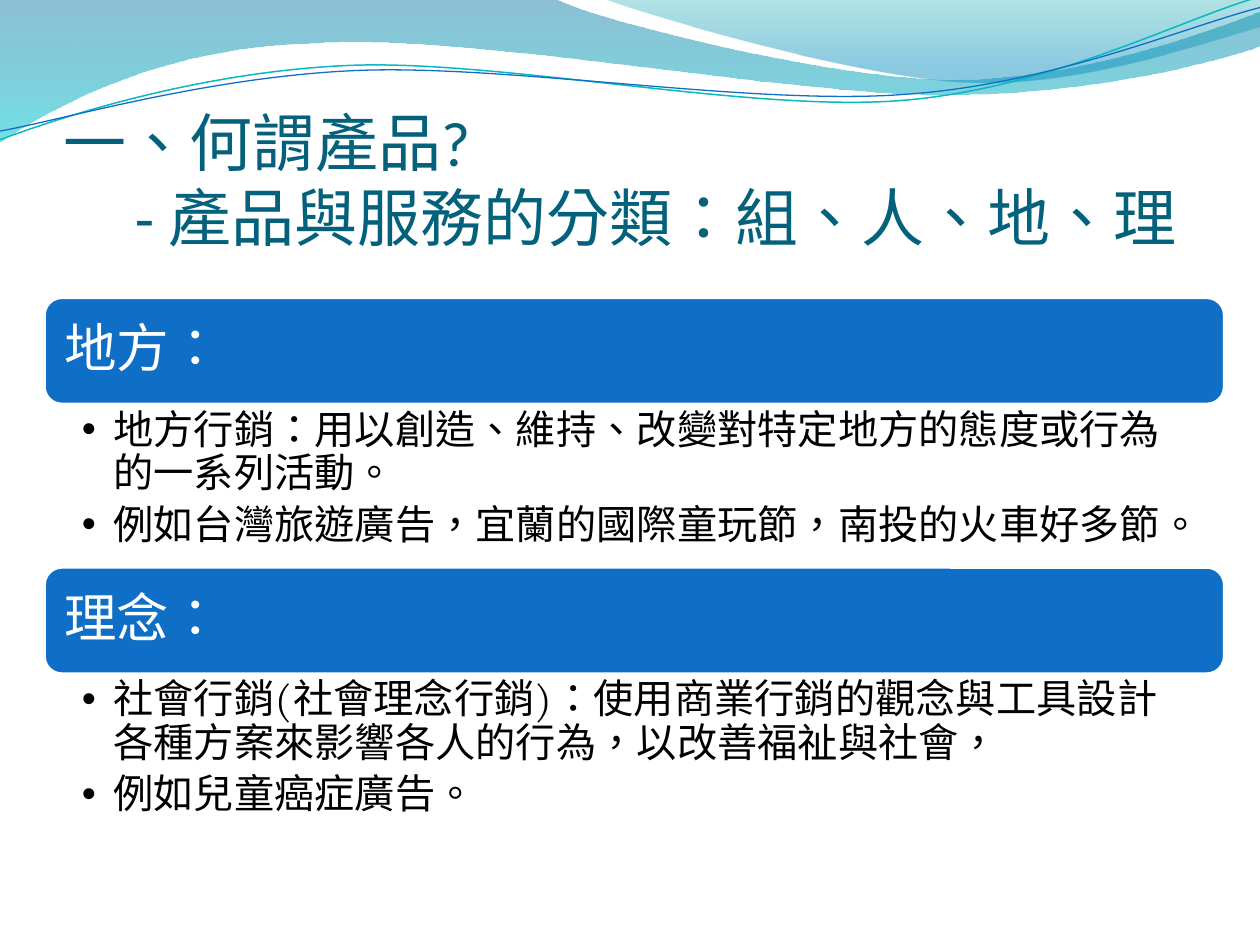
from lxml import etree
from pptx import Presentation
from pptx import util as u
from pptx.dml.color import RGBColor
from pptx.enum import lang, shapes, text
from pptx.oxml import ns

C = {"blue": "0F6FC6", "teal": "0AB8BF", "title": "04617B", "white": "FFFFFF", "black": "000000",
     "deep": "0074A1", "aqua": "00C6CF", "sea": "00A1A9", "sky": "008BBF"}
BODY_FONT = "TeX Gyre Pagella"


def draw_path(s, start, segments, close):
    ends = [(u.Inches(seg[-2]), u.Inches(seg[-1])) for seg in segments]
    fb = s.shapes.build_freeform(u.Inches(start[0]), u.Inches(start[1]))
    fb.add_line_segments(ends, close=close)
    sp = fb.convert_to_shape()
    sp.shadow.inherit = False
    for line, seg in zip(list(sp.element.spPr.iter(ns.qn("a:lnTo"))), segments):
        if len(seg) == 6:
            curve = etree.Element(ns.qn("a:cubicBezTo"))
            for x, y in zip(seg[::2], seg[1::2]):
                etree.SubElement(curve, ns.qn("a:pt"), x=str(u.Inches(x) - sp.left), y=str(u.Inches(y) - sp.top))
            line.getparent().replace(line, curve)
    return sp


def style(p, font, size, color):
    p.alignment = text.PP_ALIGN.LEFT
    for r in p.runs:
        r.font.name = font
        r.font.size = u.Pt(size)
        r.font.color.rgb = RGBColor.from_string(C[color])
        r.font.language_id = lang.MSO_LANGUAGE_ID.TRADITIONAL_CHINESE


prs = Presentation()
prs.slide_width, prs.slide_height = u.Inches(10), u.Inches(7.5)
s = prs.slides.add_slide(prs.slide_layouts[5])

waves = [
    ((0, 0), [(4.4, -0.01), (4.76, 0.17, 6.64, 0.63, 7.58, 0.63), (8.53, 0.63, 9.58, 0.26, 10, 0.09),
              (10.01, 0.36), (9.83, 0.44, 8.7, 0.76, 7.46, 0.75), (6.22, 0.75, 3.82, 0.28, 2.57, 0.34),
              (1.29, 0.36, 0.46, 0.83, -0.01, 1.13), (0, 0)],
     [(0, "deep", 45), (1, "aqua", 55)]),
    ((4.79, -0.01), [(5.09, 0.11, 6.82, 0.62, 7.69, 0.65), (8.56, 0.69, 9.61, 0.32, 10, 0.21), (10, 0),
                     (4.79, -0.01)],
     [(0, "sea", 30), (0.8, "sky", 45)]),
]
for start, segments, stops in waves:
    sp = draw_path(s, start, segments, True)
    sp.line.fill.background()
    sp.fill.gradient()
    sp.fill.gradient_angle = 270
    for stop, (pos, color, alpha) in zip(sp.fill.gradient_stops, stops):
        stop.position = pos
        stop.color.rgb = RGBColor.from_string(C[color])
    for clr, (pos, color, alpha) in zip(sp.element.spPr.iter(ns.qn("a:srgbClr")), stops):
        etree.SubElement(clr, ns.qn("a:alpha"), val=str(alpha * 1000))

strands = [
    ((0, 1.11), [(0.48, 0.93, 1.58, 0.57, 2.77, 0.52), (3.95, 0.47, 5.93, 0.89, 7.13, 0.8),
                 (8.33, 0.71, 9.38, 0.15, 9.98, -0.02)], "teal", 0.85),
    ((0, 1.04), [(0.47, 0.96, 1.64, 0.61, 2.83, 0.56), (4.03, 0.51, 5.97, 0.84, 7.17, 0.75),
                 (8.36, 0.67, 9.41, 0.21, 10, 0.06)], "blue", 0.75),
]
for start, segments, color, width in strands:
    sp = draw_path(s, start, segments, False)
    sp.fill.background()
    sp.line.color.rgb = RGBColor.from_string(C[color])
    sp.line.width = u.Pt(width)

sp = s.shapes.title
sp.left, sp.top, sp.width, sp.height = [u.Inches(v) for v in (0.5, 0.29, 9.08, 1.73)]
tf = sp.text_frame
tf.text = "一、何謂產品?\v- 產品與服務的分類：組、人、地、理"
tf.auto_size = text.MSO_AUTO_SIZE.NONE
tf.vertical_anchor = text.MSO_ANCHOR.BOTTOM
tf.margin_left = tf.margin_right = tf.margin_bottom = 0
tf.margin_top = u.Inches(0.05)
style(tf.paragraphs[0], "Calibri", 36, "title")
pPr = tf.paragraphs[0]._p.get_or_add_pPr()
pPr.set("marL", str(u.Inches(0.57)))
pPr.set("indent", str(u.Inches(-0.57)))

left, top, width, head_h, body_h = 0.35, 2.36, 9.37, 0.85, 1.29
sections = [
    ("地方：", ["地方行銷：用以創造、維持、改變對特定地方的態度或行為的一系列活動。",
              "例如台灣旅遊廣告，宜蘭的國際童玩節，南投的火車好多節。"]),
    ("理念：", ["社會行銷(社會理念行銷)：使用商業行銷的觀念與工具設計各種方案來影響各人的行為，以改善福祉與社會，",
              "例如兒童癌症廣告。"]),
]
for i, (heading, bullets) in enumerate(sections):
    y = top + i * (head_h + body_h)
    sp = s.shapes.add_shape(shapes.MSO_SHAPE.ROUNDED_RECTANGLE, u.Inches(left), u.Inches(y),
                            u.Inches(width), u.Inches(head_h))
    sp.shadow.inherit = False
    sp.fill.solid()
    sp.fill.fore_color.rgb = RGBColor.from_string(C["blue"])
    sp.line.color.rgb = RGBColor.from_string(C["white"])
    sp.line.width = u.Pt(2)
    tf = sp.text_frame
    tf.text = heading
    tf.vertical_anchor = text.MSO_ANCHOR.MIDDLE
    tf.margin_left = tf.margin_right = u.Inches(0.12)
    tf.paragraphs[0].line_spacing = 0.9
    style(tf.paragraphs[0], BODY_FONT, 30, "white")

    sp = s.shapes.add_textbox(u.Inches(left), u.Inches(y + head_h), u.Inches(width), u.Inches(body_h))
    tf = sp.text_frame
    tf.word_wrap = True
    tf.margin_left, tf.margin_right = u.Inches(0.3), u.Inches(0.23)
    tf.margin_top = tf.margin_bottom = u.Inches(0.04)
    tf.text = "\n".join(bullets)
    for p in tf.paragraphs:
        style(p, BODY_FONT, 23, "black")
        p.line_spacing = 0.9
        p.space_after = u.Pt(4.6)
        pPr = p._p.get_or_add_pPr()
        pPr.set("marL", str(u.Inches(0.25)))
        pPr.set("indent", str(u.Inches(-0.25)))
        etree.SubElement(pPr, ns.qn("a:buFont"), typeface="Arial")
        etree.SubElement(pPr, ns.qn("a:buChar"), char="•")

prs.save("out.pptx")
